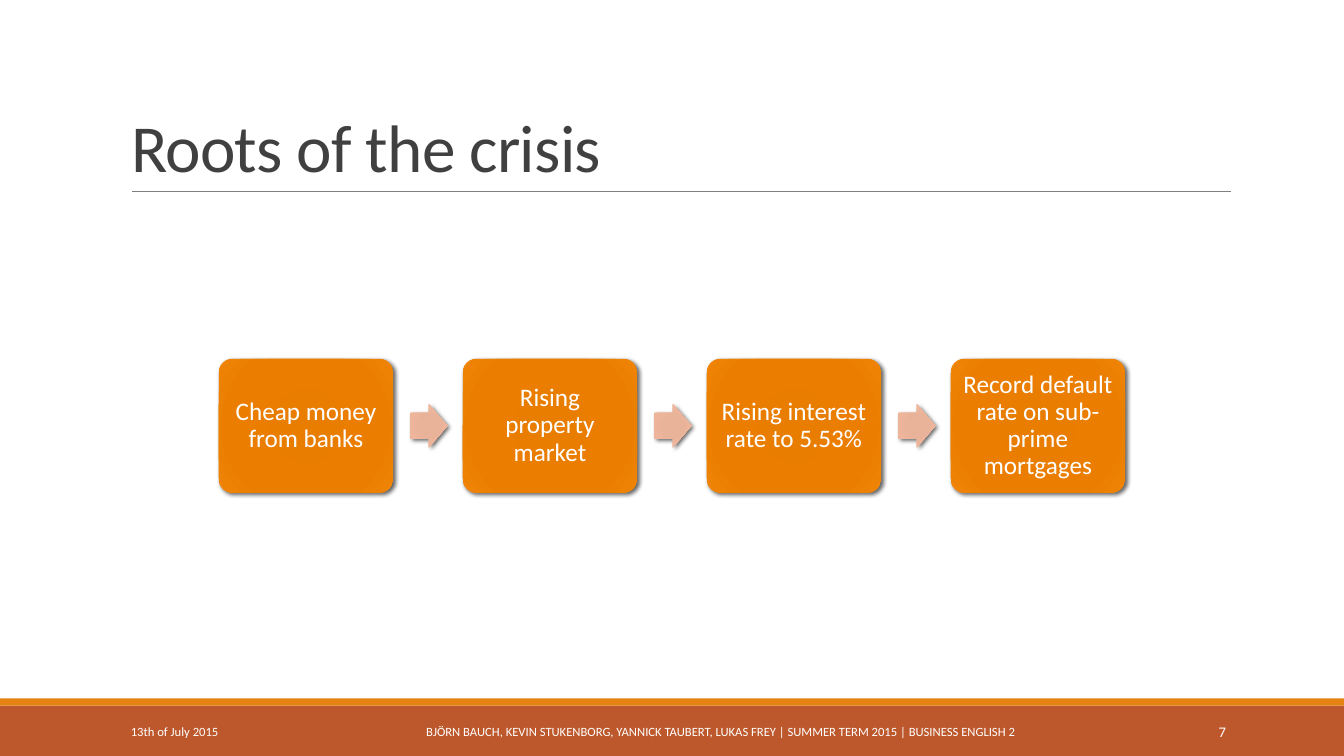
from lxml import etree
from pptx import Presentation
from pptx.dml.color import RGBColor
from pptx.enum import shapes, text
from pptx.oxml import parse_xml
from pptx.oxml.ns import nsdecls, qn
from pptx.util import Inches, Pt

WHITE = RGBColor(0xFF, 0xFF, 0xFF)
INK = RGBColor(0x40, 0x40, 0x40)
GREY = RGBColor(0x80, 0x80, 0x80)
RUST = RGBColor(0xBD, 0x58, 0x2C)
AMBER = RGBColor(0xE4, 0x83, 0x12)
STEP_STOPS = ((0, "E57B00"), (34, "E87D00"), (70, "EB7E00"), (100, "EF8407"))
ARROW_STOPS = ((0, "E8B196"), (34, "E9B399"), (70, "EEB59A"), (100, "F3C0A8"))
STEPS = ("Cheap money from banks", "Rising property market",
         "Rising interest rate to 5.53%",
         "Record default rate on sub-prime mortgages")
STEP_LEFT, STEP_PITCH, ARROW_OFFSET = 2.17, 2.42, 1.9
FOOTERS = (
    (1.2, 2.7, "13th of July 2015", 9, text.PP_ALIGN.LEFT),
    (4.03, 6.23, "BJÖRN BAUCH, KEVIN STUKENBORG, YANNICK TAUBERT, LUKAS FREY"
     " | SUMMER TERM 2015 | BUSINESS ENGLISH 2", 9, text.PP_ALIGN.CENTER),
    (10.83, 1.43, "7", 10.5, text.PP_ALIGN.RIGHT),
)


class SlideBuilder:
    """Draws styled elements on the current slide."""

    font_name = "Calibri"

    def __init__(self, page):
        self.page = page

    def set_text(self, shape, words, size, color, align, anchor, spacing=1.0, inset=None):
        frame = shape.text_frame
        settings = {"word_wrap": True, "auto_size": text.MSO_AUTO_SIZE.NONE,
                    "vertical_anchor": anchor}
        if inset is not None:
            for side in ("left", "right", "top", "bottom"):
                settings[f"margin_{side}"] = Inches(inset)
        for name, value in settings.items():
            setattr(frame, name, value)
        para = frame.paragraphs[0]
        para.alignment = align
        para.line_spacing = spacing
        span = para.add_run()
        span.text = words
        for name, value in {"name": self.font_name, "size": Pt(size)}.items():
            setattr(span.font, name, value)
        span.font.color.rgb = color
        return span

    def title(self, words, *bounds):
        holder = self.page.shapes.title
        for name, value in zip(("left", "top", "width", "height"), bounds):
            setattr(holder, name, Inches(value))
        span = self.set_text(holder, words, 48, INK, text.PP_ALIGN.LEFT,
                             text.MSO_ANCHOR.BOTTOM, 0.85)
        span.font._element.set("spc", "-50")

    def label(self, words, size, align, *bounds):
        box = self.page.shapes.add_textbox(*map(Inches, bounds))
        self.set_text(box, words, size, WHITE, align, text.MSO_ANCHOR.MIDDLE)

    def shape(self, kind, *bounds):
        shape = self.page.shapes.add_shape(kind, *map(Inches, bounds))
        shape.line.fill.background()
        shape.shadow.inherit = False
        return shape

    def bar(self, color, *bounds):
        fill = self.shape(shapes.MSO_SHAPE.RECTANGLE, *bounds).fill
        fill.solid()
        fill.fore_color.rgb = color

    def rule(self, color, weight, *ends):
        line = self.page.shapes.add_connector(
            shapes.MSO_CONNECTOR.STRAIGHT, *map(Inches, ends))
        line.line.color.rgb = color
        line.line.width = Pt(weight)
        etree.SubElement(line._element.spPr, qn("a:effectLst"))

    def raised(self, kind, adjustments, stops, *bounds):
        shape = self.shape(kind, *bounds)
        for index, value in enumerate(adjustments):
            shape.adjustments[index] = value
        shape.fill.background()
        properties = shape._element.spPr
        marks = "".join(f'<a:gs pos="{spot * 1000}"><a:srgbClr val="{color}"/></a:gs>'
                        for spot, color in stops)
        gradient = parse_xml(
            f'<a:gradFill {nsdecls("a")} rotWithShape="1"><a:gsLst>{marks}</a:gsLst>'
            '<a:path path="circle"><a:fillToRect l="100000" t="100000" '
            'r="100000" b="100000"/></a:path></a:gradFill>')
        properties.replace(properties.find(qn("a:noFill")), gradient)
        properties.find(qn("a:effectLst")).append(parse_xml(
            f'<a:outerShdw {nsdecls("a")} blurRad="{Pt(3)}" dist="{Pt(2)}" '
            'dir="2700000" algn="tl" rotWithShape="0"><a:srgbClr val="000000">'
            '<a:alpha val="60000"/></a:srgbClr></a:outerShdw>'))
        return shape

    def step(self, words, left):
        card = self.raised(shapes.MSO_SHAPE.ROUNDED_RECTANGLE, (0.1,), STEP_STOPS,
                           left, 3.56, 1.73, 1.33)
        self.set_text(card, words, 18, WHITE, text.PP_ALIGN.CENTER,
                      text.MSO_ANCHOR.MIDDLE, 0.9, 0.07)

    def arrow(self, left):
        self.raised(shapes.MSO_SHAPE.RIGHT_ARROW, (0.6, 0.5), ARROW_STOPS,
                    left, 4.01, 0.37, 0.43)


def main():
    deck = Presentation()
    deck.slide_width, deck.slide_height = Inches(13.33), Inches(7.5)
    builder = SlideBuilder(deck.slides.add_slide(deck.slide_layouts[5]))
    builder.bar(RUST, 0, 7, 13.33, 0.5)
    builder.bar(AMBER, 0, 6.93, 13.33, 0.07)
    builder.rule(GREY, 0.5, 1.31, 1.9, 12.21, 1.9)
    builder.title("Roots of the crisis", 1.2, 0.31, 11, 1.59)
    for index, words in enumerate(STEPS):
        left = STEP_LEFT + index * STEP_PITCH
        builder.step(words, left)
        if index < len(STEPS) - 1:
            builder.arrow(left + ARROW_OFFSET)
    for left, width, words, size, align in FOOTERS:
        builder.label(words, size, align, left, 7.06, width, 0.4)
    deck.save("out.pptx")


if __name__ == "__main__":
    main()
